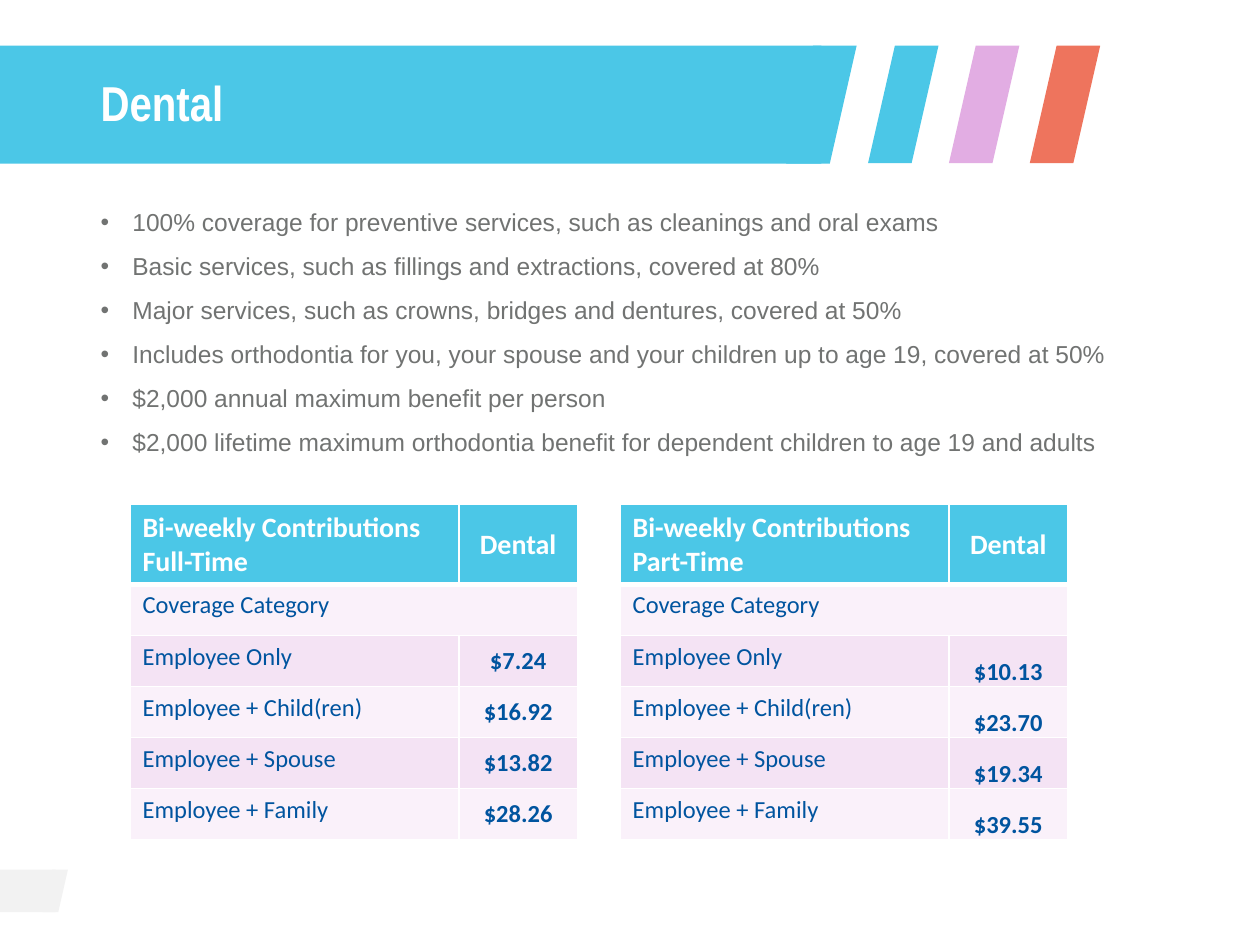
"""Build the dental benefits slide with its two contribution tables."""
import dataclasses

import lxml.etree
import pptx
import pptx.dml.color
import pptx.enum.shapes
import pptx.enum.text
import pptx.oxml.ns
import pptx.util

Cm = pptx.util.Cm
Pt = pptx.util.Pt
ALIGN = pptx.enum.text.PP_ALIGN
ANCHOR = pptx.enum.text.MSO_ANCHOR
SHAPE = pptx.enum.shapes.MSO_SHAPE


@dataclasses.dataclass(frozen=True)
class Theme:
    blue: str = "4BC7E7"
    lilac: str = "E2ADE3"
    coral: str = "EE745D"
    pale: str = "F2F2F2"
    white: str = "FFFFFF"
    gray: str = "717372"
    navy: str = "00549F"
    light_band: str = "FAF1FA"
    dark_band: str = "F4E3F4"
    title_font: str = "Arial Narrow"
    body_font: str = "Arial"
    table_font: str = "Calibri"
    title_size: int = 28
    header_size: int = 16
    text_size: int = 14
    slant: float = 0.381


def rgb(color):
    return pptx.dml.color.RGBColor.from_string(color)


def add_xml(parent, tag, **attributes):
    return lxml.etree.SubElement(parent, pptx.oxml.ns.qn(tag), **attributes)


def write_text(paragraph, text, *, font, size, color, bold=False,
               align=ALIGN.LEFT, line=None, before=None):
    paragraph.alignment = align
    if line is not None:
        paragraph.line_spacing = line
    if before is not None:
        paragraph.space_before = Pt(before)
    run = paragraph.add_run()
    run.text = text
    run.font.name = font
    run.font.size = Pt(size)
    run.font.bold = bold
    run.font.color.rgb = rgb(color)


class SlideBuilder:
    def __init__(self, slide, theme):
        self.slide = slide
        self.theme = theme

    def block(self, kind, left, top, width, height, color):
        block = self.slide.shapes.add_shape(
            kind, Cm(left), Cm(top), Cm(width), Cm(height))
        block.shadow.inherit = False
        block.fill.solid()
        block.fill.fore_color.rgb = rgb(color)
        block.line.fill.background()
        if kind == SHAPE.PARALLELOGRAM:
            block.adjustments[0] = self.theme.slant

    def frame(self, left, top, width, height, anchor):
        frame = self.slide.shapes.add_textbox(
            Cm(left), Cm(top), Cm(width), Cm(height)).text_frame
        frame.word_wrap = True
        frame.vertical_anchor = anchor
        return frame

    def title(self, text, left, top, width, height):
        heading = self.frame(left, top, width, height, ANCHOR.MIDDLE)
        write_text(heading.paragraphs[0], text, font=self.theme.title_font,
                   size=self.theme.title_size, color=self.theme.white,
                   bold=True, line=0.9)

    def bullets(self, items, left, top, width, height):
        body = self.frame(left, top, width, height, ANCHOR.TOP)
        indent = Cm(0.64)
        for index, item in enumerate(items):
            paragraph = body.add_paragraph() if index else body.paragraphs[0]
            properties = paragraph._p.get_or_add_pPr()
            properties.set("marL", str(indent))
            properties.set("indent", str(-indent))
            bullet_color = add_xml(properties, "a:buClr")
            add_xml(bullet_color, "a:srgbClr", val=self.theme.gray)
            add_xml(properties, "a:buFont", typeface=self.theme.body_font)
            add_xml(properties, "a:buChar", char="•")
            write_text(paragraph, item, font=self.theme.body_font,
                       size=self.theme.text_size, color=self.theme.gray,
                       line=0.9, before=10 if index else 0)

    def borders(self, cell, top=1, bottom=1):
        properties = cell._tc.get_or_add_tcPr()
        widths = {"a:lnL": 1, "a:lnR": 1, "a:lnT": top, "a:lnB": bottom}
        for position, (tag, width) in enumerate(widths.items()):
            edge = add_xml(properties, tag, w=str(Pt(width)))
            add_xml(add_xml(edge, "a:solidFill"), "a:srgbClr", val=self.theme.white)
            properties.insert(position, edge)

    def cell(self, cell, lines, fill, anchor=ANCHOR.TOP, **text_format):
        cell.fill.solid()
        cell.fill.fore_color.rgb = rgb(fill)
        cell.vertical_anchor = anchor
        for index, line in enumerate(lines):
            paragraph = (cell.text_frame.add_paragraph() if index
                         else cell.text_frame.paragraphs[0])
            write_text(paragraph, line, font=self.theme.table_font, **text_format)

    def rate_table(self, schedule, rates, left, top, rate_anchor):
        theme = self.theme
        widths, heights = (6.63, 2.39), [1.6] + [1.03] * (len(rates) + 1)
        table = self.slide.shapes.add_table(
            len(heights), len(widths), Cm(left), Cm(top),
            Cm(sum(widths)), Cm(sum(heights))).table
        for column, width in zip(table.columns, widths):
            column.width = Cm(width)
        for row, height in zip(table.rows, heights):
            row.height = Cm(height)

        header = dict(size=theme.header_size, color=theme.white, bold=True)
        entry = dict(size=theme.text_size, color=theme.navy)
        self.cell(table.cell(0, 0), ["Bi-weekly Contributions", schedule],
                  theme.blue, **header)
        self.cell(table.cell(0, 1), ["Dental"], theme.blue, ANCHOR.MIDDLE,
                  align=ALIGN.CENTER, **header)
        table.cell(1, 0).merge(table.cell(1, 1))
        self.cell(table.cell(1, 0), ["Coverage Category"], theme.light_band, **entry)
        for row, (category, rate) in enumerate(rates.items(), start=2):
            fill = theme.light_band if row % 2 else theme.dark_band
            self.cell(table.cell(row, 0), [category], fill, **entry)
            amount = table.cell(row, 1)
            amount.margin_left = amount.margin_right = 0
            amount.margin_top = amount.margin_bottom = 0
            self.cell(amount, [rate], fill, rate_anchor, bold=True,
                      align=ALIGN.CENTER, **entry)
        for row in range(len(heights)):
            for column in range(len(widths)):
                self.borders(table.cell(row, column), top=3 if row == 1 else 1,
                             bottom=3 if row == 0 else 1)


def main():
    theme = Theme()
    deck = pptx.Presentation()
    deck.slide_width, deck.slide_height = Cm(25.4), Cm(19.05)
    builder = SlideBuilder(deck.slides.add_slide(deck.slide_layouts[6]), theme)

    builder.block(SHAPE.PARALLELOGRAM, 0.86, 17.53, 0.51, 0.86, theme.pale)
    builder.block(SHAPE.RECTANGLE, 0, 17.53, 1.12, 0.86, theme.pale)
    builder.block(SHAPE.RECTANGLE, -0.46, 0.92, 17.02, 2.38, theme.blue)
    builder.block(SHAPE.PARALLELOGRAM, 15.85, 0.92, 1.42, 2.38, theme.blue)
    for index, color in enumerate((theme.blue, theme.lilac, theme.coral)):
        builder.block(SHAPE.PARALLELOGRAM, 17.5 + index * 1.63, 0.92,
                      1.42, 2.37, color)

    builder.bullets([
        "100% coverage for preventive services, such as cleanings and oral exams",
        "Basic services, such as fillings and extractions, covered at 80%",
        "Major services, such as crowns, bridges and dentures, covered at 50%",
        "Includes orthodontia for you, your spouse and your children up to age 19, covered at 50%",
        "$2,000 annual maximum benefit per person",
        "$2,000 lifetime maximum orthodontia benefit for dependent children to age 19 and adults",
    ], 1.78, 4.11, 22.58, 5.33)
    builder.title("Dental", 1.78, 1.55, 14.81, 1.14)

    categories = ("Employee Only", "Employee + Child(ren)",
                  "Employee + Spouse", "Employee + Family")
    full_time = dict(zip(categories, ("$7.24", "$16.92", "$13.82", "$28.26")))
    part_time = dict(zip(categories, ("$10.13", "$23.70", "$19.34", "$39.55")))
    builder.rate_table("Full-Time", full_time, 2.62, 10.17, ANCHOR.MIDDLE)
    builder.rate_table("Part-Time", part_time, 12.5, 10.17, ANCHOR.BOTTOM)
    deck.save("out.pptx")


if __name__ == "__main__":
    main()
